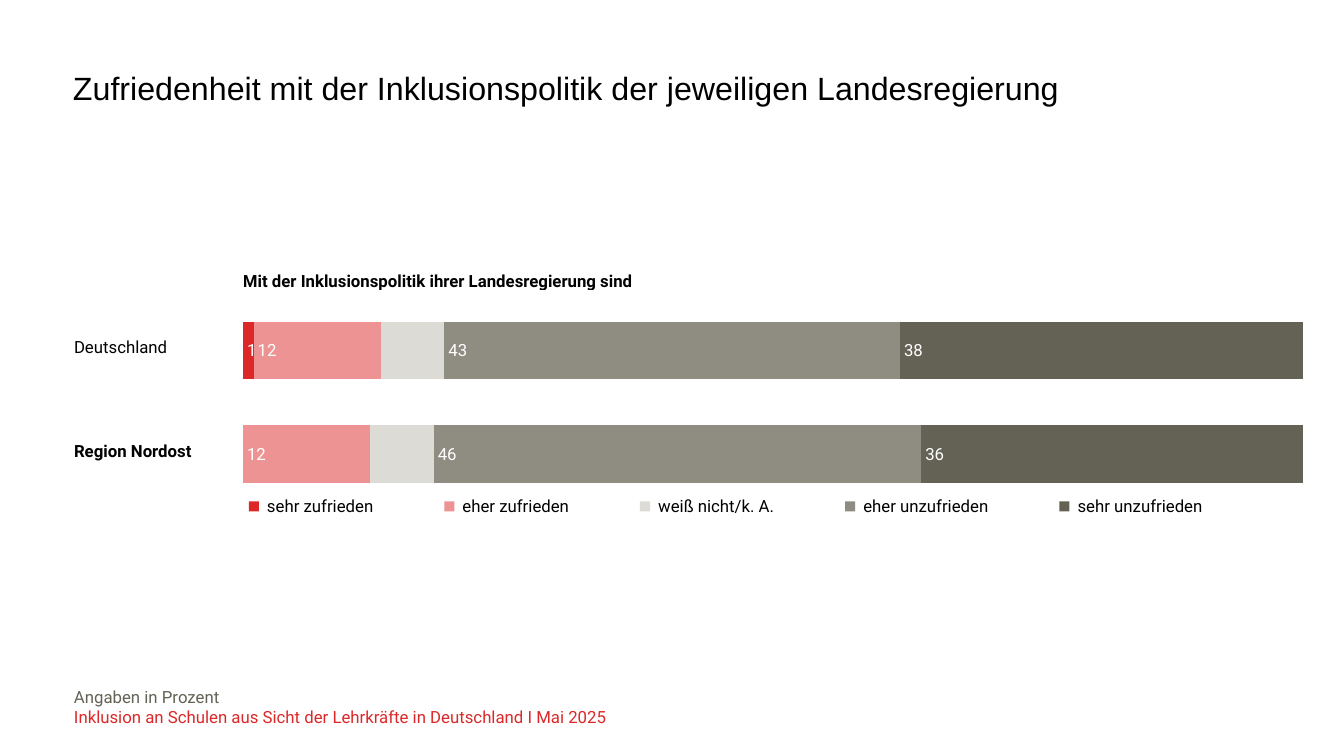
from pptx import Presentation
from pptx.chart.data import CategoryChartData
from pptx.dml.color import RGBColor
from pptx.enum.chart import XL_CHART_TYPE as ChartType
from pptx.enum.chart import XL_LABEL_POSITION as LabelPos
from pptx.enum.chart import XL_LEGEND_POSITION as LegendPos
from pptx.enum.text import MSO_ANCHOR as Anchor
from pptx.oxml import parse_xml
from pptx.oxml.ns import nsdecls
from pptx.util import Emu, Pt

BLACK, WHITE, RED, OLIVE = "000000", "FFFFFF", "DC2828", "636255"
ANSWERS = [
    (" sehr zufrieden", (1, None), RED),
    (" eher zufrieden", (12, 12), "ED9393"),
    (" weiß nicht/k. A.", (6, 6), "DCDBD5"),
    (" eher unzufrieden", (43, 46), "8F8D81"),
    (" sehr unzufrieden", (38, 36), OLIVE),
]
UNLABELLED = " weiß nicht/k. A."


def px(length):
    """Turn whole pixels into EMU."""
    return Emu(round(length * 914400 / 100.8))


def color(hex_code):
    """Turn a hex string into a colour."""
    return RGBColor.from_string(hex_code)


def style_font(font, size, name, hex_code, bold=False):
    """Set size, typeface, colour and weight of a font."""
    font.size, font.name, font.bold = Pt(size), name, bold
    font.color.rgb = color(hex_code)


def add_run(paragraph, text, size=12, name="Roboto", hex_code=BLACK, bold=False, spacing=1.0):
    """Add one styled run to a paragraph."""
    paragraph.line_spacing = spacing
    run = paragraph.add_run()
    run.text = text
    style_font(run.font, size, name, hex_code, bold)


def add_text_frame(slide, box):
    """Add a wrapping text box without insets and return its frame."""
    frame = slide.shapes.add_textbox(*map(px, box)).text_frame
    frame.word_wrap = True
    frame.margin_left = frame.margin_right = frame.margin_top = frame.margin_bottom = 0
    return frame


def add_title(slide, box):
    """Place the slide title."""
    title = add_text_frame(slide, box)
    add_run(title.paragraphs[0], "Zufriedenheit mit der Inklusionspolitik der jeweiligen Landesregierung",
            23, "Arial", spacing=0.9)


def add_footer(slide, box):
    """Place the unit note and the survey name."""
    footer = add_text_frame(slide, box)
    add_run(footer.paragraphs[0], "Angaben in Prozent", hex_code=OLIVE, spacing=0.85)
    add_run(footer.add_paragraph(),
            "Inklusion an Schulen aus Sicht der Lehrkräfte in Deutschland I Mai 2025", hex_code=RED)


def add_label_table(slide, box, labels, anchor, spacing=1.0):
    """Place a one-column table of (text, bold) labels in equal rows."""
    table = slide.shapes.add_table(len(labels), 1, *map(px, box)).table
    table.first_row = table.horz_banding = False
    for row, (text, bold) in enumerate(labels):
        cell = table.cell(row, 0)
        cell.fill.background()
        cell.vertical_anchor = anchor
        cell.margin_left = cell.margin_right = cell.margin_top = cell.margin_bottom = 0
        add_run(cell.text_frame.paragraphs[0], text, bold=bold, spacing=spacing)


def set_layout(element, after, x, y, width, height, inner=False):
    """Give a chart part a manual layout in fractions of the chart."""
    for old in element.xpath("c:layout"):
        element.remove(old)
    target = '<c:layoutTarget val="inner"/>' if inner else ""
    layout = parse_xml(
        f'<c:layout {nsdecls("c")}><c:manualLayout>{target}'
        '<c:xMode val="edge"/><c:yMode val="edge"/>'
        f'<c:x val="{x}"/><c:y val="{y}"/><c:w val="{width}"/><c:h val="{height}"/>'
        '</c:manualLayout></c:layout>')
    element.insert(after, layout)


def add_satisfaction_chart(slide, box):
    """Place the stacked bars with their legend."""
    data = CategoryChartData()
    data.categories = ["1", "2"]
    for name, values, _ in ANSWERS:
        data.add_series(name, values)
    chart = slide.shapes.add_chart(ChartType.BAR_STACKED, *map(px, box), data).chart
    style_font(chart.font, 12, "Roboto", BLACK)
    chart.has_title = False

    regions, percent = chart.category_axis, chart.value_axis
    regions.reverse_order = True
    percent.minimum_scale, percent.maximum_scale, percent.major_unit = 0, 100, 20
    percent.has_major_gridlines = False
    regions.visible = percent.visible = False

    plot = chart.plots[0]
    plot.gap_width, plot.overlap, plot.vary_by_categories = 80, 100, False
    for series, (name, _, fill) in zip(plot.series, ANSWERS):
        series.format.fill.solid()
        series.format.fill.fore_color.rgb = color(fill)
        if name != UNLABELLED:
            labels = series.data_labels
            labels.show_value = True
            labels.position = LabelPos.INSIDE_BASE
            style_font(labels.font, 12, "Roboto", WHITE)

    chart.has_legend = True
    chart.legend.position = LegendPos.BOTTOM
    chart.legend.include_in_layout = False
    set_layout(chart.element.xpath("//c:plotArea")[0], 0, 0.091, 0.194, 0.909, 0.456, inner=True)
    set_layout(chart.element.xpath("//c:legend")[0], 1, 0.04, 0.62, 0.93, 0.06)


def main():
    """Build and save the slide."""
    deck = Presentation()
    deck.slide_width, deck.slide_height = px(1344), px(756)
    slide = deck.slides.add_slide(deck.slide_layouts[6])
    add_satisfaction_chart(slide, (137, 210, 1166, 456))
    add_title(slide, (73, 73, 1231, 92))
    add_footer(slide, (74, 690, 1118, 38))
    add_label_table(slide, (243, 269, 1062, 22),
                    [("Mit der Inklusionspolitik ihrer Landesregierung sind", True)], Anchor.BOTTOM, 0.85)
    add_label_table(slide, (74, 296, 150, 208),
                    [("Deutschland", False), ("Region Nordost", True)], Anchor.MIDDLE)
    deck.save("out.pptx")


if __name__ == "__main__":
    main()
